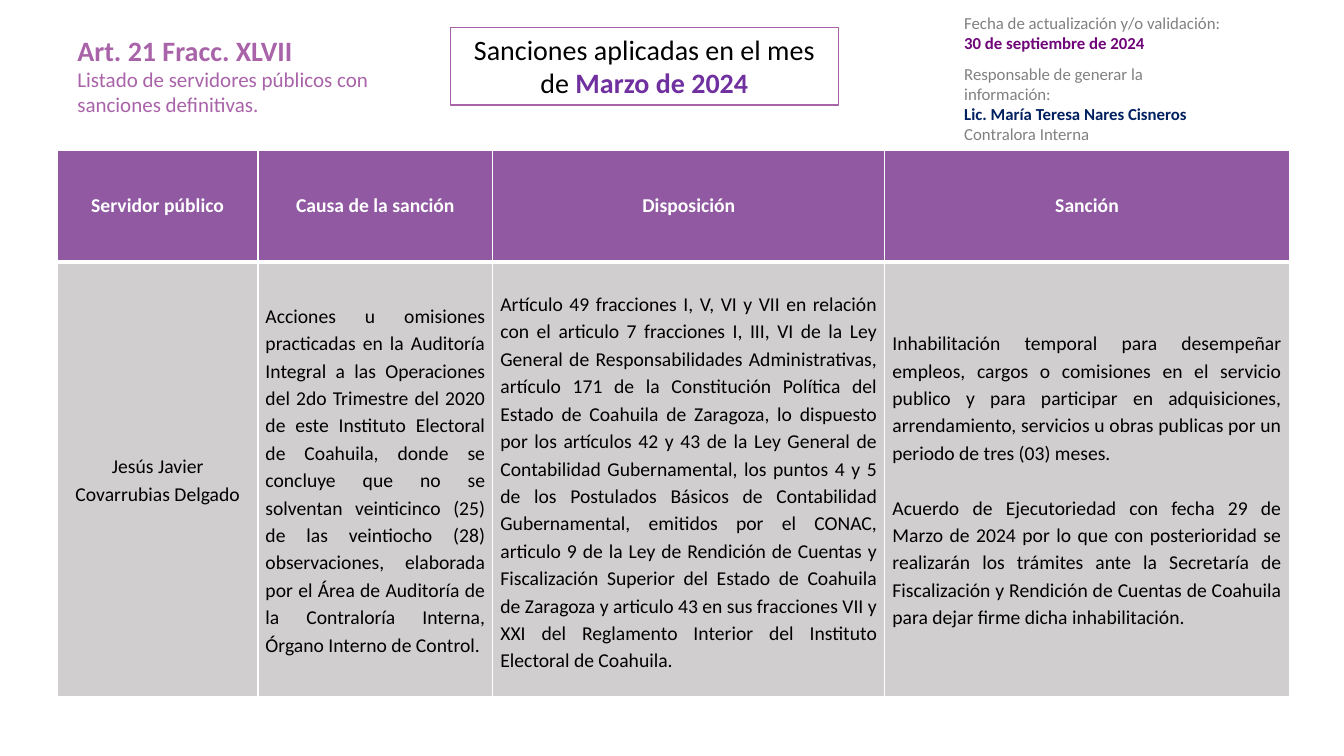
from lxml.etree import SubElement
from pptx import Presentation
from pptx.dml.color import RGBColor
from pptx.enum.shapes import MSO_SHAPE
from pptx.enum.text import MSO_ANCHOR, MSO_AUTO_SIZE, PP_ALIGN
from pptx.oxml.ns import qn
from pptx.util import Cm, Pt

GRAY, LILAC, PLUM, BLACK, WHITE = "808080", "A963A9", "9059A1", "000000", "FFFFFF"
MID, JUST = PP_ALIGN.CENTER, PP_ALIGN.JUSTIFY
WIDTHS = (5.05, 5.92, 9.88, 10.19)
HEADS = ("Servidor público", "Causa de la sanción", "Disposición", "Sanción")
BODY = (
    ["Jesús Javier Covarrubias Delgado"],
    ["Acciones u omisiones practicadas en la Auditoría Integral a las Operaciones del "
     "2do Trimestre del 2020 de este Instituto Electoral de Coahuila, donde se concluye "
     "que no se solventan veinticinco (25) de las veintiocho (28) observaciones, "
     "elaborada por el Área de Auditoría de la Contraloría Interna, Órgano Interno de "
     "Control."],
    ["Artículo 49 fracciones I, V, VI y VII en relación con el articulo 7 fracciones I, "
     "III, VI de la Ley General de Responsabilidades Administrativas, artículo 171 de la "
     "Constitución Política del Estado de Coahuila de Zaragoza, lo dispuesto por los "
     "artículos 42 y 43 de la Ley General de Contabilidad Gubernamental, los puntos 4 y "
     "5 de los Postulados Básicos de Contabilidad Gubernamental, emitidos por el CONAC, "
     "articulo 9 de la Ley de Rendición de Cuentas y Fiscalización Superior del Estado "
     "de Coahuila de Zaragoza y articulo 43 en sus fracciones VII y XXI del Reglamento "
     "Interior del Instituto Electoral de Coahuila."],
    ["Inhabilitación temporal para desempeñar empleos, cargos o comisiones en el "
     "servicio publico y para participar en adquisiciones, arrendamiento, servicios u "
     "obras publicas por un periodo de tres (03) meses.",
     "Acuerdo de Ejecutoriedad con fecha 29 de Marzo de 2024 por lo que con "
     "posterioridad se realizarán los trámites ante la Secretaría de Fiscalización y "
     "Rendición de Cuentas de Coahuila para dejar firme dicha inhabilitación."],
)


def color(code):
    """Turn a hex string into a colour."""
    return RGBColor.from_string(code)


def apply(item, style):
    """Set every attribute named in a dict."""
    for key, value in style.items():
        setattr(item, key, value)


def write(frame, paras, **style):
    """Fill a text frame with paragraphs of (text, size, hex, bold) runs."""
    for i, runs in enumerate(paras):
        para = frame.add_paragraph() if i else frame.paragraphs[0]
        apply(para, style)
        for text, size, code, bold in runs:
            run = para.add_run()
            run.text = text
            apply(run.font, {"name": "Calibri", "size": Pt(size), "bold": bold})
            run.font.color.rgb = color(code)


def label(slide, box, paras, wrap=True):
    """Add a text box."""
    frame = slide.shapes.add_textbox(*map(Cm, box)).text_frame
    apply(frame, {"word_wrap": wrap, "auto_size": MSO_AUTO_SIZE.SHAPE_TO_FIT_TEXT})
    write(frame, paras)


def panel(slide, box, paras):
    """Add an outlined box with centred text."""
    shape = slide.shapes.add_shape(MSO_SHAPE.RECTANGLE, *map(Cm, box))
    shape.shadow.inherit = False
    shape.fill.solid()
    shape.fill.fore_color.rgb = color(WHITE)
    shape.line.color.rgb = color(LILAC)
    shape.line.width = Pt(1)
    apply(shape.text_frame, {"word_wrap": True, "vertical_anchor": MSO_ANCHOR.TOP,
                             "auto_size": MSO_AUTO_SIZE.SHAPE_TO_FIT_TEXT})
    write(shape.text_frame, paras, alignment=MID)


def border(cell, **sides):
    """Draw white cell borders with the given widths in points."""
    props = cell._tc.get_or_add_tcPr()
    for side, width in sides.items():
        line = SubElement(props, qn(f"a:ln{side}"), w=str(Pt(width)))
        fill = SubElement(line, qn("a:solidFill"))
        SubElement(fill, qn("a:srgbClr"), val=WHITE)


def paint(cell, code, **style):
    """Fill a cell and set its format."""
    cell.fill.solid()
    cell.fill.fore_color.rgb = color(code)
    apply(cell, {"vertical_anchor": MSO_ANCHOR.MIDDLE, **style})


def grid(slide):
    """Add the table of sanctions."""
    table = slide.shapes.add_table(2, len(WIDTHS), Cm(1.45), Cm(3.78),
                                   Cm(sum(WIDTHS)), Cm(13.77)).table
    for row, height in zip(table.rows, (2.82, 10.95)):
        row.height = Cm(height)
    pad = {"margin_left": Cm(0.19), "margin_right": Cm(0.19),
           "margin_top": 0, "margin_bottom": 0}
    for col, (width, head, texts) in enumerate(zip(WIDTHS, HEADS, BODY)):
        table.columns[col].width = Cm(width)
        top, cell = table.cell(0, col), table.cell(1, col)
        border(top, L=1, R=1, T=1, B=3)
        paint(top, PLUM)
        write(top.text_frame, [[(head, 14, WHITE, True)]], alignment=MID)
        border(cell, L=1, R=1, T=3, B=1)
        paint(cell, "D0CECE", **pad)
        write(cell.text_frame, [[(text, 14, BLACK, False)] for text in texts],
              alignment=JUST if col else MID, line_spacing=1.15)
        for para in cell.text_frame.paragraphs[1:]:
            para.space_before = Pt(19.6)
    apply(table.cell(1, 2), {"vertical_anchor": MSO_ANCHOR.TOP, "margin_top": Cm(0.69)})


def main():
    """Build and save the slide."""
    deck = Presentation()
    apply(deck, {"slide_width": Cm(33.87), "slide_height": Cm(19.05)})
    slide = deck.slides.add_slide(deck.slide_layouts[6])
    label(slide, (24.05, 0.2, 7.14, 1.27), [
        [("Fecha de actualización y/o validación:", 12, GRAY, False)],
        [("30 de septiembre de 2024", 12, "6F0579", True)]], wrap=False)
    label(slide, (24.05, 1.47, 6.73, 2.31), [
        [("Responsable de generar la información:", 12, GRAY, False)],
        [("Lic. María Teresa Nares Cisneros", 12, "002060", True)],
        [("Contralora Interna", 12, GRAY, False)]])
    label(slide, (1.7, 0.71, 8.92, 3.25), [
        [("Art. 21 Fracc. XLVII", 20, LILAC, True)],
        [("Listado de servidores públicos con sanciones definitivas.", 15, LILAC, False)]])
    grid(slide)
    panel(slide, (11.35, 0.69, 9.78, 1.96), [
        [("Sanciones aplicadas en el mes de ", 20, BLACK, False),
         ("Marzo de 2024", 20, "7030A0", True)]])
    deck.save("out.pptx")


if __name__ == "__main__":
    main()
